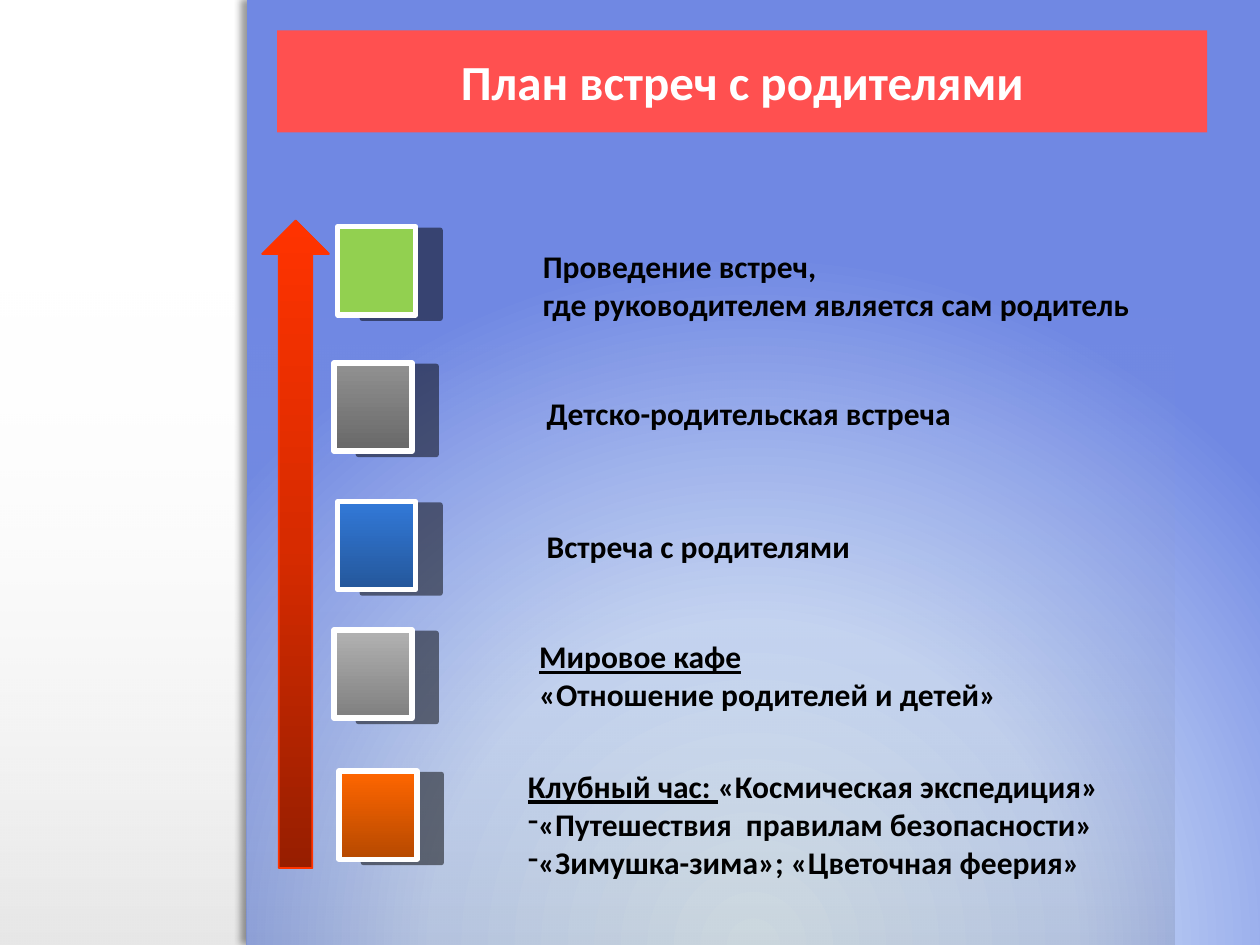
from lxml import etree
from pptx import Presentation
from pptx.dml.color import RGBColor
from pptx.enum import shapes, text
from pptx.oxml import ns
from pptx.util import Pt

THEME = {
    "font": "Calibri", "title_size": 28, "body_size": 18,
    "white": "FFFFFF", "black": "000000", "title_fill": "FF5050", "arrow_line": "FF3300",
    # Gradient stops: position in percent, colour, opacity in percent
    "panel": [(0, "E0EDF5", 100), (46, "C8D8F6", 100), (100, "7088E3", 100)],
    "shade": [(0, "000000", 10), (100, "FFFFFF", 0)],
    "arrow": [(0, "971E00", 100), (50, "D72B00", 100), (100, "FF3300", 100)],
    "green": "92D050",
    "dark_gray": [(0, "919191", 100), (100, "686868", 100)],
    "blue": [(0, "3279D8", 100), (100, "24579B", 100)],
    "light_gray": [(0, "B2B2B2", 100), (100, "7F7F7F", 100)],
    "orange": [(0, "FF6600", 100), (100, "B64900", 100)],
    # Shadows: opacity in percent, blur, distance, angle
    "panel_shadow": (40, 4, 3, 180), "marker_shadow": (50, 0, 14.1, 8),
}

TITLE = "План встреч с родителями"
MARKER_SIZE = (44.6, 50.4)
# Marker position and fill, text box, paragraphs of (underlined, plain, is bulleted)
STEPS = [
    ((193, 129.6), "green", (303.1, 137.5, 416.9, 72.7), [
        ("", "Проведение встреч,", False),
        ("", "где руководителем является сам родитель", False)]),
    ((190.8, 207.4), "dark_gray", (305.3, 221.8, 335.5, 29), [
        ("", "Детско-родительская встреча", False)]),
    ((193, 286.6), "blue", (305.3, 297.4, 329.8, 29), [
        ("", "Встреча с родителями", False)]),
    ((190.8, 360), "light_gray", (301, 360.7, 312.5, 72.7), [
        ("Мировое кафе", "", False),
        ("", "«Отношение родителей и детей»", False)]),
    ((193.7, 440.6), "orange", (294.5, 434.9, 425.5, 72.7), [
        ("Клубный час: ", "«Космическая экспедиция»", False),
        ("", "«Путешествия  правилам безопасности»", True),
        ("", "«Зимушка-зима»; «Цветочная феерия»", True)]),
]


def add_xml(parent, tag, **attributes):
    element = etree.SubElement(parent, ns.qn(tag))
    for name, value in attributes.items():
        element.set(name, str(value))
    return element


def set_fill(shape, fill, angle=90):
    """Fill with one colour or with stops; angle None makes a radial gradient."""
    if isinstance(fill, str):
        shape.fill.solid()
        shape.fill.fore_color.rgb = RGBColor.from_string(fill)
        return
    shape.fill.gradient()
    gradient = shape._element.spPr.find(ns.qn("a:gradFill"))
    gradient.clear()
    stops = add_xml(gradient, "a:gsLst")
    for position, color, opacity in fill:
        stop = add_xml(stops, "a:gs", pos=position * 1000)
        value = add_xml(stop, "a:srgbClr", val=color)
        if opacity < 100:
            add_xml(value, "a:alpha", val=opacity * 1000)
    if angle is None:
        circle = add_xml(gradient, "a:path", path="circle")
        add_xml(circle, "a:fillToRect", l=50000, t=130000, r=50000, b=-30000)
    else:
        add_xml(gradient, "a:lin", ang=angle * 60000, scaled=0)


def add_box(slide, kind, box, fill, angle=90, line=None, shadow=None):
    shape = slide.shapes.add_shape(kind, *map(Pt, box))
    set_fill(shape, fill, angle)
    if line:
        color, width = line
        shape.line.color.rgb = RGBColor.from_string(color)
        shape.line.width = Pt(width)
    else:
        shape.line.fill.background()
    shape.shadow.inherit = False
    if shadow:
        opacity, blur, distance, direction = shadow
        effects = shape._element.spPr.find(ns.qn("a:effectLst"))
        outer = add_xml(effects, "a:outerShdw", blurRad=Pt(blur), dist=Pt(distance),
                        dir=direction * 60000, algn="tl", rotWithShape=0)
        color = add_xml(outer, "a:srgbClr", val=THEME["black"])
        add_xml(color, "a:alpha", val=opacity * 1000)
    return shape


def add_run(paragraph, words, size, color, underline=False):
    run = paragraph.add_run()
    run.text = words
    formats = {"name": THEME["font"], "size": Pt(size), "bold": True, "underline": underline}
    for name, value in formats.items():
        setattr(run.font, name, value)
    run.font.color.rgb = RGBColor.from_string(color)


def add_title(slide):
    title = slide.shapes.title
    for name, value in zip(("left", "top", "width", "height"), (158.4, 17.3, 531.4, 58.3)):
        setattr(title, name, Pt(value))
    geometry = add_xml(title._element.spPr, "a:prstGeom", prst="roundRect")
    add_xml(geometry, "a:avLst")
    set_fill(title, THEME["title_fill"])
    frame = title.text_frame
    frame.auto_size = text.MSO_AUTO_SIZE.NONE
    frame.vertical_anchor = text.MSO_ANCHOR.MIDDLE
    paragraph = frame.paragraphs[0]
    paragraph.alignment = text.PP_ALIGN.CENTER
    add_run(paragraph, TITLE, THEME["title_size"], THEME["white"])
    slide.shapes._spTree.append(title._element)  # bring above the panel


def add_step_text(slide, box, paragraphs):
    frame = slide.shapes.add_textbox(*map(Pt, box)).text_frame
    frame.word_wrap = True
    for index, (underlined, plain, bulleted) in enumerate(paragraphs):
        paragraph = frame.add_paragraph() if index else frame.paragraphs[0]
        if bulleted:
            properties = paragraph._p.get_or_add_pPr()
            add_xml(properties, "a:buFontTx")
            add_xml(properties, "a:buChar", char="-")
        for words, underline in ((underlined, True), (plain, False)):
            if words:
                add_run(paragraph, words, THEME["body_size"], THEME["black"], underline)


def main():
    presentation = Presentation()
    presentation.slide_width, presentation.slide_height = Pt(720), Pt(540)
    slide = presentation.slides.add_slide(presentation.slide_layouts[5])
    kinds = shapes.MSO_SHAPE

    # Background panel and the shade along the bottom
    add_box(slide, kinds.RECTANGLE, (141.1, 0, 578.9, 540), THEME["panel"],
            angle=None, shadow=THEME["panel_shadow"])
    add_box(slide, kinds.RECTANGLE, (-49.7, 159.1, 720.7, 380.9), THEME["shade"], angle=270)

    add_title(slide)

    # Steps: a marker and its text
    for position, fill, box, paragraphs in STEPS:
        add_box(slide, kinds.RECTANGLE, position + MARKER_SIZE, THEME[fill],
                line=(THEME["white"], 3), shadow=THEME["marker_shadow"])
        add_step_text(slide, box, paragraphs)

    # Rising arrow
    add_box(slide, kinds.UP_ARROW, (149.8, 126, 38.2, 370.1), THEME["arrow"],
            angle=270, line=(THEME["arrow_line"], 1))

    presentation.save("out.pptx")


if __name__ == "__main__":
    main()
